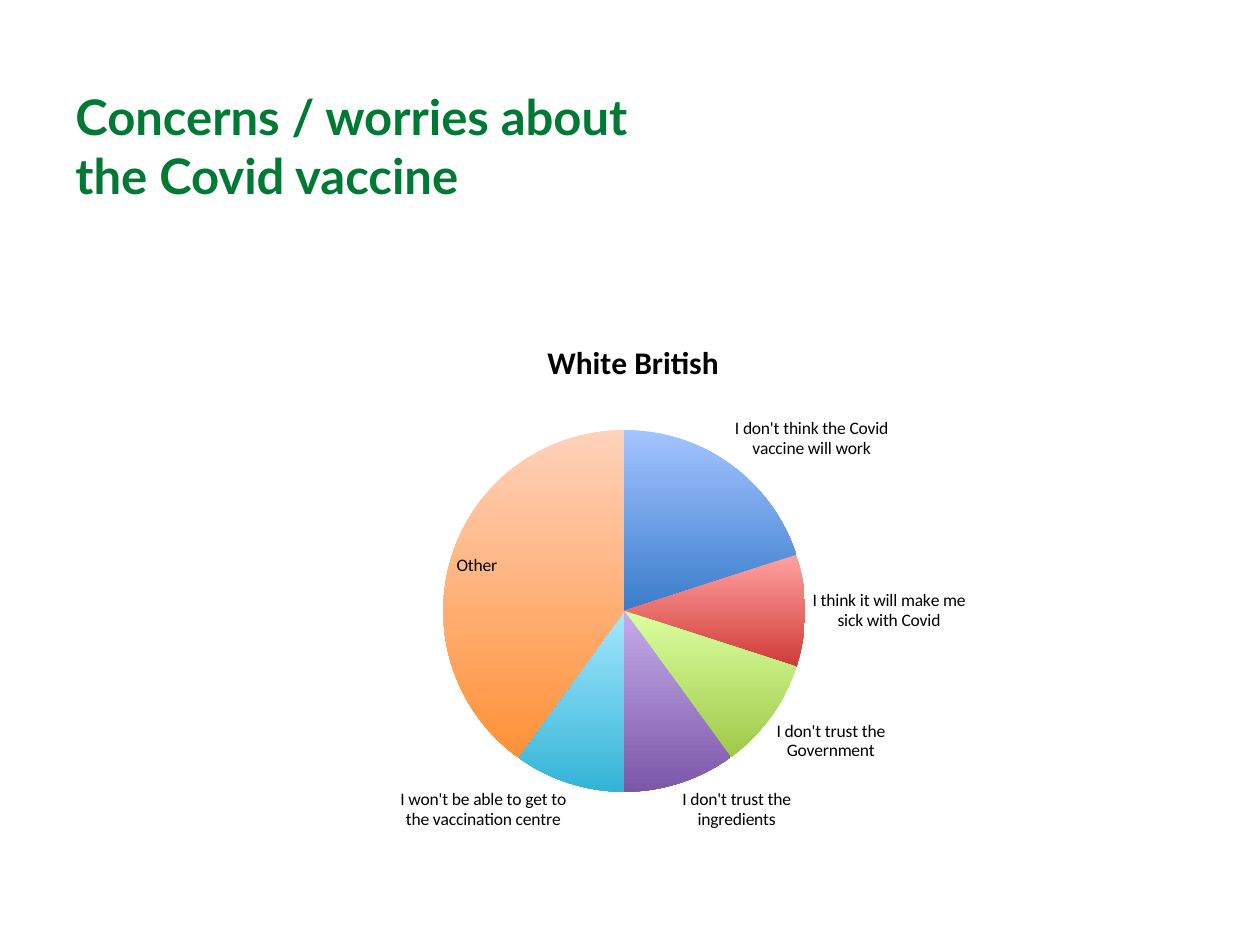
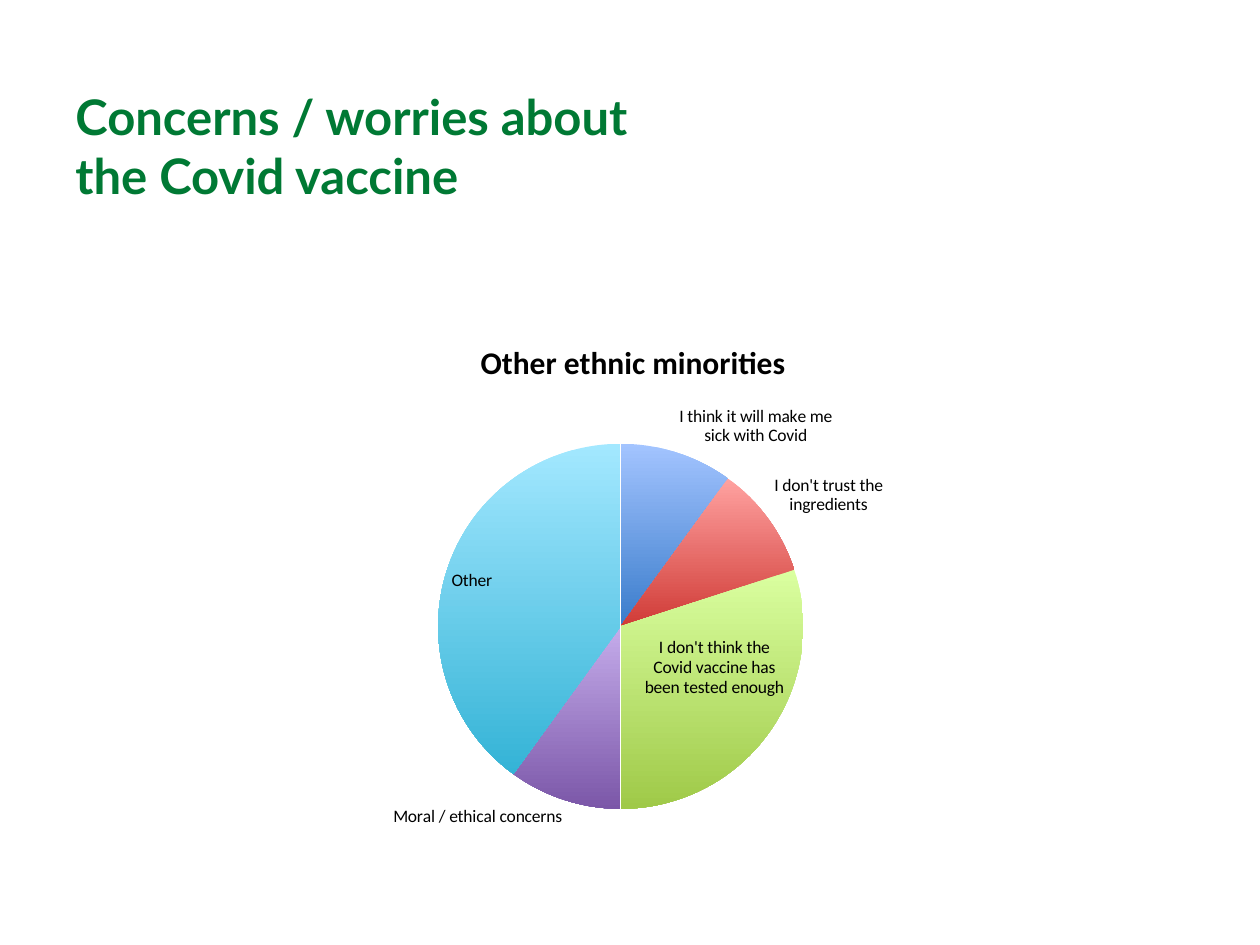
import dataclasses

import pptx
import pptx.chart.data
import pptx.dml.color
import pptx.enum.chart
import pptx.enum.text
import pptx.oxml
import pptx.oxml.ns
import pptx.util
from pptx.util import Inches


@dataclasses.dataclass(frozen=True)
class Theme:
    title_color: str = "007934"
    text_color: str = "000000"
    title_font: str = "Lato"
    chart_font: str = "Calibri"
    title_size: int = 28
    chart_title_size: int = 18
    label_size: int = 10
    slice_gradients: tuple = (
        ("A3C4FF", "3A7CCB"),
        ("FFA2A0", "D03B37"),
        ("DAFFA0", "9FC948"),
        ("C5ACEB", "7B57A8"),
        ("A3E8FF", "34B3D6"),
        ("FFD2BB", "FF9138"),
    )


THEME = Theme()
HEADING = "Concerns / worries about\vthe Covid vaccine"

WORRIES = (
    (
        "White British",
        {
            "I don't think the Covid vaccine will work": 20,
            "I think it will make me sick with Covid": 10,
            "I don't trust the Government": 10,
            "I don't trust the ingredients": 10,
            "I won't be able to get to the vaccination centre": 10,
            "Other": 40,
        },
        {"x": 0.286, "y": 0.211, "w": 0.408, "h": 0.679},
    ),
    (
        "Other ethnic minorities",
        {
            "I think it will make me sick with Covid": 10,
            "I don't trust the ingredients": 10,
            "I don't think the Covid vaccine has been tested enough": 30,
            "Moral / ethical concerns": 10,
            "Other": 40,
        },
        {"x": 0.28, "y": 0.237, "w": 0.412, "h": 0.685},
    ),
)


def style_font(font, name, size, color, bold=False):
    font.name = name
    font.size = pptx.util.Pt(size)
    font.bold = bold
    font.color.rgb = pptx.dml.color.RGBColor.from_string(color)


def add_heading(slide, text):
    box = slide.shapes.add_textbox(Inches(0.5), Inches(0.64), Inches(8.55), Inches(1.88))
    frame = box.text_frame
    frame.word_wrap = True
    frame.vertical_anchor = pptx.enum.text.MSO_ANCHOR.TOP
    paragraph = frame.paragraphs[0]
    paragraph.text = text
    style_font(paragraph.font, THEME.title_font, THEME.title_size, THEME.title_color, bold=True)


def fill_slice(point, gradient):
    fill = point.format.fill
    fill.gradient()
    fill.gradient_angle = 270
    for stop, color in zip(fill.gradient_stops, gradient):
        stop.color.rgb = pptx.dml.color.RGBColor.from_string(color)
    point.format.line.fill.background()


def place_pie(chart, area):
    plot_area = chart.element.find(".//" + pptx.oxml.ns.qn("c:plotArea"))
    for layout in plot_area.findall(pptx.oxml.ns.qn("c:layout")):
        plot_area.remove(layout)
    modes = "".join(f'<c:{axis}Mode val="edge"/>' for axis in "xy")
    sizes = "".join(f'<c:{side} val="{share}"/>' for side, share in area.items())
    plot_area.insert(0, pptx.oxml.parse_xml(
        f'<c:layout {pptx.oxml.ns.nsdecls("c")}><c:manualLayout>'
        f'<c:layoutTarget val="inner"/>{modes}{sizes}</c:manualLayout></c:layout>'
    ))


def add_worries_pie(slide, title, shares, area):
    data = pptx.chart.data.CategoryChartData()
    data.categories = list(shares)
    data.add_series("Series 1", list(shares.values()))
    chart = slide.shapes.add_chart(
        pptx.enum.chart.XL_CHART_TYPE.PIE,
        Inches(1.5), Inches(2.52), Inches(7.05), Inches(4.23), data,
    ).chart
    style_font(chart.font, THEME.chart_font, THEME.label_size, THEME.text_color)
    chart.has_legend = False
    chart.has_title = True
    chart.chart_title.include_in_layout = False
    paragraph = chart.chart_title.text_frame.paragraphs[0]
    paragraph.text = title
    style_font(paragraph.font, THEME.chart_font, THEME.chart_title_size, THEME.text_color, bold=True)

    plot = chart.plots[0]
    plot.vary_by_categories = True
    plot.has_data_labels = True
    labels = plot.data_labels
    labels.show_category_name = True
    labels.show_value = False
    labels.show_percentage = False
    labels.position = pptx.enum.chart.XL_LABEL_POSITION.BEST_FIT
    style_font(labels.font, THEME.chart_font, THEME.label_size, THEME.text_color)
    for index, gradient in enumerate(THEME.slice_gradients[:len(shares)]):
        fill_slice(plot.series[0].points[index], gradient)
    place_pie(chart, area)


def main():
    presentation = pptx.Presentation()
    presentation.slide_width = Inches(10)
    presentation.slide_height = Inches(7.5)
    for title, shares, area in WORRIES:
        slide = presentation.slides.add_slide(presentation.slide_layouts[6])
        add_heading(slide, HEADING)
        add_worries_pie(slide, title, shares, area)
    presentation.save("out.pptx")


if __name__ == "__main__":
    main()
